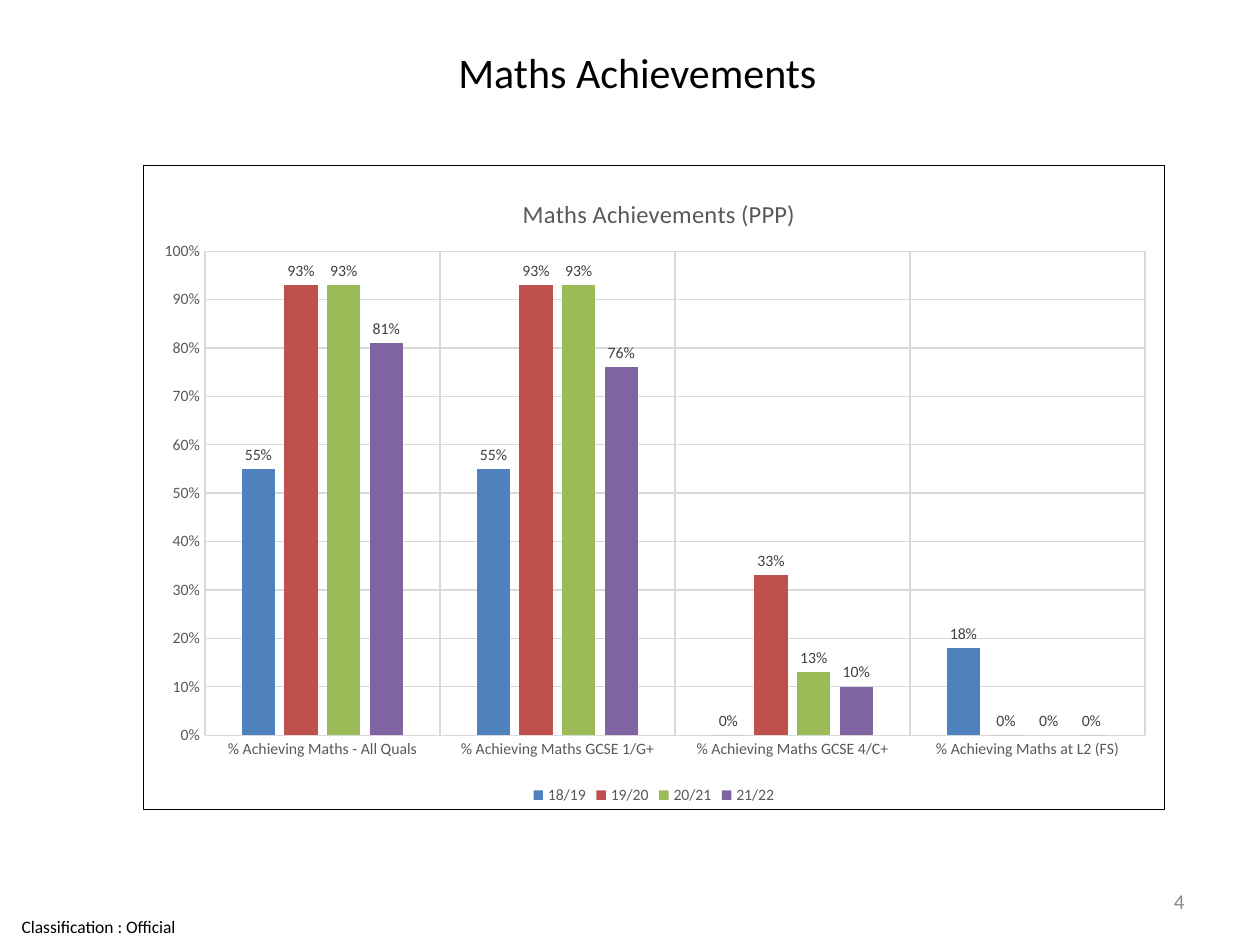
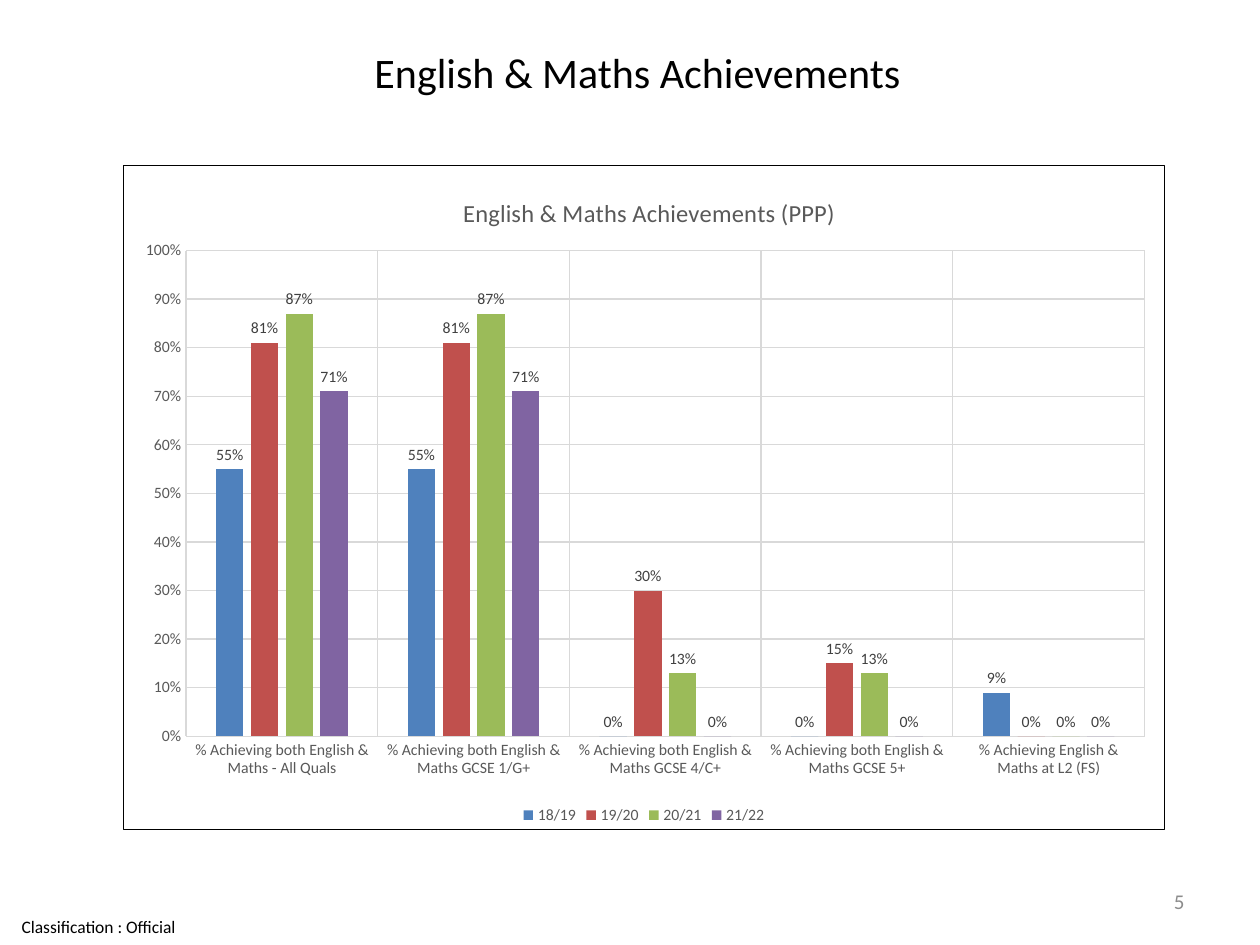
import pptx
import pptx.util
import pptx.dml.color
import pptx.chart.data
import pptx.enum.chart
import pptx.enum.text
import pptx.oxml
import pptx.oxml.ns

PX_PER_INCH = 126
BLACK = pptx.dml.color.RGBColor(0, 0, 0)
GREY = pptx.dml.color.RGBColor(0x8C, 0x8C, 0x8C)
AXIS_TEXT = pptx.dml.color.RGBColor(0x59, 0x59, 0x59)
LABEL_TEXT = pptx.dml.color.RGBColor(0x40, 0x40, 0x40)
GRID = pptx.dml.color.RGBColor(0xD9, 0xD9, 0xD9)
BLUE = pptx.dml.color.RGBColor(0x4F, 0x81, 0xBD)
RED = pptx.dml.color.RGBColor(0xC0, 0x50, 0x4D)
GREEN = pptx.dml.color.RGBColor(0x9B, 0xBB, 0x59)
PURPLE = pptx.dml.color.RGBColor(0x80, 0x64, 0xA2)

FONT_NAME = "Calibri"
YEARS = {"18/19": BLUE, "19/20": RED, "20/21": GREEN, "21/22": PURPLE}
ALIGN = pptx.enum.text.PP_ALIGN
TITLE_BOX = (96, 37, 1083, 69)
NUMBER_BOX = (903, 876, 294, 50)
CLASSIFICATION_BOX = (0, 908, 197, 37)

PAGES = [
    {
        "title": "Maths Achievements",
        "number": "4",
        "box": (143, 165, 1022, 645),
        "heading": (375, 27),
        "plot": (61, 86, 941, 485),
        "categories": [
            "% Achieving Maths - All Quals",
            "% Achieving Maths GCSE 1/G+",
            "% Achieving Maths GCSE 4/C+",
            "% Achieving Maths at L2 (FS)",
        ],
        "values": [
            (0.55, 0.55, 0, 0.18),
            (0.93, 0.93, 0.33, 0),
            (0.93, 0.93, 0.13, 0),
            (0.81, 0.76, 0.1, 0),
        ],
    },
    {
        "title": "English & Maths Achievements",
        "number": "5",
        "box": (123, 165, 1042, 665),
        "heading": (336, 26),
        "plot": (62, 85, 960, 487),
        "categories": [
            "% Achieving both English & Maths - All Quals",
            "% Achieving both English & Maths GCSE 1/G+",
            "% Achieving both English & Maths GCSE 4/C+",
            "% Achieving both English & Maths GCSE 5+",
            "% Achieving English & Maths at L2 (FS)",
        ],
        "values": [
            (0.55, 0.55, 0, 0, 0.09),
            (0.81, 0.81, 0.3, 0.15, 0),
            (0.87, 0.87, 0.13, 0.13, 0),
            (0.71, 0.71, 0, 0, 0),
        ],
    },
]


def px(length):
    return pptx.util.Emu(round(length * 914400 / PX_PER_INCH))


def set_values(target, values):
    for name, value in values.items():
        setattr(target, name, value)


def style_font(font, size, colour):
    set_values(font, {"name": FONT_NAME, "size": pptx.util.Pt(size), "bold": False})
    font.color.rgb = colour


def fill_text(shape, text, size, colour, align):
    frame = shape.text_frame
    set_values(frame, {
        "word_wrap": True,
        "vertical_anchor": pptx.enum.text.MSO_ANCHOR.MIDDLE,
    })
    para = frame.paragraphs[0]
    para.alignment = align
    span = para.add_run()
    span.text = text
    style_font(span.font, size, colour)
    return frame


def add_title(page, text, box):
    title = page.shapes.title
    set_values(title, dict(zip(("left", "top", "width", "height"), map(px, box))))
    fill_text(title, text, 24, BLACK, ALIGN.CENTER)


def add_footer(page, number):
    classification = page.shapes.add_textbox(*map(px, CLASSIFICATION_BOX))
    frame = fill_text(classification, "Classification : Official", 10, BLACK, ALIGN.CENTER)
    set_values(frame, dict.fromkeys(
        ("margin_left", "margin_top", "margin_right", "margin_bottom"), 0))
    fill_text(page.shapes.add_textbox(*map(px, NUMBER_BOX)), number, 12, GREY, ALIGN.RIGHT)


def place_part(element, index, target, fractions):
    for old in element.findall(pptx.oxml.ns.qn("c:layout")):
        element.remove(old)
    entries = [f'<c:layoutTarget val="{target}"/>'] if target else []
    entries += [f'<c:{name}Mode val="edge"/>' for name in "xy"]
    entries += [
        f'<c:{name} val="{value:.3f}"/>' for name, value in zip("xywh", fractions)
    ]
    element.insert(index, pptx.oxml.parse_xml(
        f'<c:layout {pptx.oxml.ns.nsdecls("c")}><c:manualLayout>'
        f'{"".join(entries)}</c:manualLayout></c:layout>'))


def add_border(chart):
    border = pptx.oxml.parse_xml(
        f'<c:spPr {pptx.oxml.ns.nsdecls("c", "a")}>'
        '<a:solidFill><a:srgbClr val="FFFFFF"/></a:solidFill>'
        f'<a:ln w="9525"><a:solidFill><a:srgbClr val="{BLACK}"/></a:solidFill></a:ln>'
        '</c:spPr>')
    chart.element.find(pptx.oxml.ns.qn("c:chart")).addnext(border)


def style_line(line):
    line.color.rgb = GRID
    line.width = pptx.util.Pt(0.75)


def style_axes(chart):
    for axis in (chart.category_axis, chart.value_axis):
        set_values(axis, {
            "has_major_gridlines": True,
            "major_tick_mark": pptx.enum.chart.XL_TICK_MARK.NONE,
            "minor_tick_mark": pptx.enum.chart.XL_TICK_MARK.NONE,
        })
        style_font(axis.tick_labels.font, 9, AXIS_TEXT)
        style_line(axis.major_gridlines.format.line)
    style_line(chart.category_axis.format.line)
    chart.value_axis.format.line.fill.background()
    set_values(chart.value_axis, {"minimum_scale": 0, "maximum_scale": 1, "major_unit": 0.1})
    set_values(chart.value_axis.tick_labels, {
        "number_format": "0%", "number_format_is_linked": False})


def style_columns(plot):
    set_values(plot, {"gap_width": 219, "overlap": -27, "vary_by_categories": False})
    for series, colour in zip(plot.series, YEARS.values()):
        series.format.fill.solid()
        series.format.fill.fore_color.rgb = colour
        labels = series.data_labels
        set_values(labels, {
            "show_value": True,
            "number_format": "0%",
            "number_format_is_linked": False,
            "position": pptx.enum.chart.XL_LABEL_POSITION.OUTSIDE_END,
        })
        style_font(labels.font, 9, LABEL_TEXT)


def add_achievement_chart(page, content):
    data = pptx.chart.data.CategoryChartData(number_format="0%")
    data.categories = content["categories"]
    for year, values in zip(YEARS, content["values"]):
        data.add_series(year, values)
    box = content["box"]
    chart = page.shapes.add_chart(
        pptx.enum.chart.XL_CHART_TYPE.COLUMN_CLUSTERED, *map(px, box), data).chart
    style_font(chart.font, 10, BLACK)
    set_values(chart, {"has_title": True, "has_legend": True})

    para = chart.chart_title.text_frame.paragraphs[0]
    span = para.add_run()
    span.text = f'{content["title"]} (PPP)'
    style_font(span.font, 14, AXIS_TEXT)

    set_values(chart.legend, {
        "position": pptx.enum.chart.XL_LEGEND_POSITION.BOTTOM,
        "include_in_layout": False,
    })
    style_font(chart.legend.font, 9, AXIS_TEXT)
    style_axes(chart)
    style_columns(chart.plots[0])
    add_border(chart)

    sizes = box[2:] * 2
    plot_area = chart.element.find(".//" + pptx.oxml.ns.qn("c:plotArea"))
    for element, index, target, part in (
        (chart.chart_title.element, 1, None, content["heading"]),
        (plot_area, 0, "inner", content["plot"]),
    ):
        place_part(element, index, target, [a / b for a, b in zip(part, sizes)])


def add_achievement_page(deck, content):
    page = deck.slides.add_slide(deck.slide_layouts.get_by_name("Title Only"))
    add_title(page, content["title"], TITLE_BOX)
    add_footer(page, content["number"])
    add_achievement_chart(page, content)


def main():
    deck = pptx.Presentation()
    set_values(deck, {"slide_width": px(1260), "slide_height": px(945)})
    for content in PAGES:
        add_achievement_page(deck, content)
    deck.save("out.pptx")


if __name__ == "__main__":
    main()
